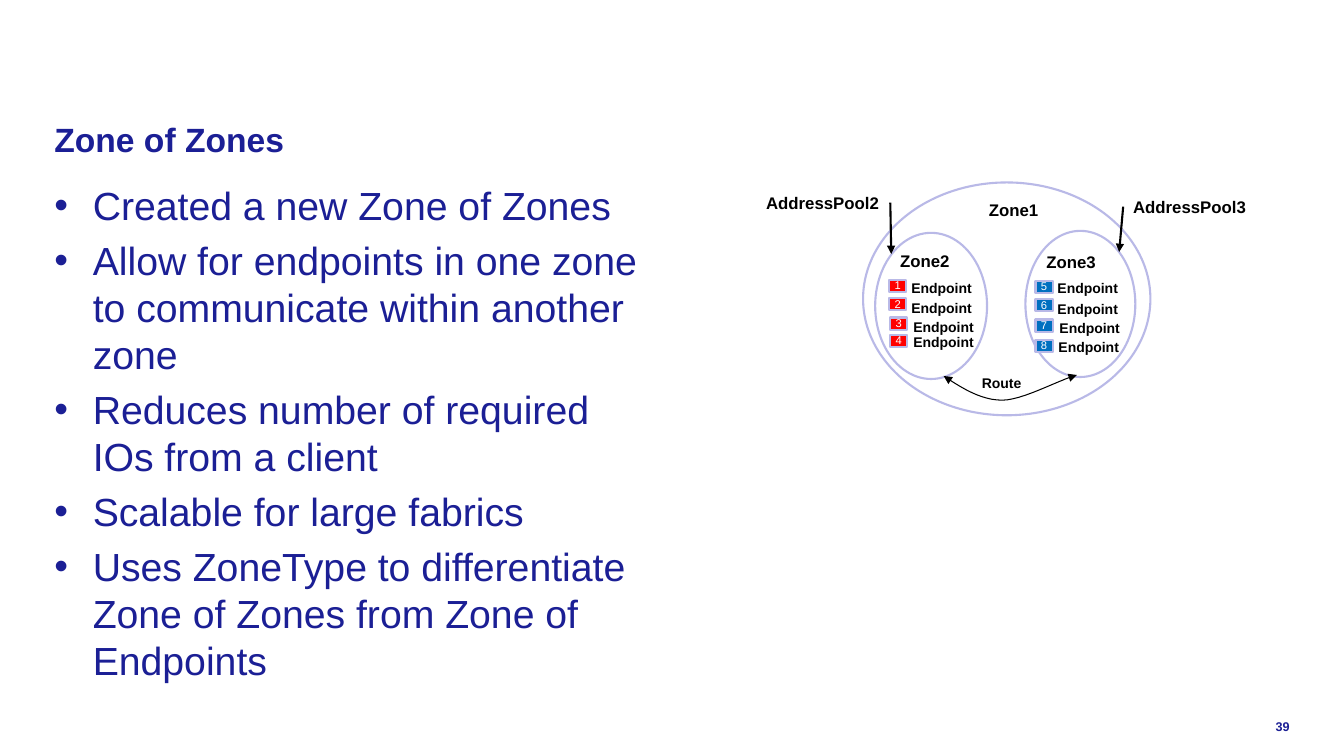
"""Builds the Zone of Zones slide with its bullet list and zone diagram."""
import pptx
import pptx.dml.color
import pptx.enum.shapes
import pptx.enum.text
import pptx.oxml
import pptx.oxml.ns
import pptx.util

Inches = pptx.util.Inches
Pt = pptx.util.Pt
MSO_SHAPE = pptx.enum.shapes.MSO_SHAPE
ANCHOR = pptx.enum.text.MSO_ANCHOR
ALIGN = pptx.enum.text.PP_ALIGN
AUTO = pptx.enum.text.MSO_AUTO_SIZE


def rgb(value):
    return pptx.dml.color.RGBColor.from_string(value)


def add_xml(parent, tag, **attrs):
    el = pptx.oxml.parse_xml(f"<a:{tag} {pptx.oxml.ns.nsdecls('a')}/>")
    for name, value in attrs.items():
        el.set(name, value)
    parent.append(el)


def bezier(start, c1, c2, end, steps=12):
    for i in range(1, steps + 1):
        t = i / steps
        weights = ((1 - t) ** 3, 3 * t * (1 - t) ** 2, 3 * t * t * (1 - t), t ** 3)
        yield tuple(
            sum(w * pt[axis] for w, pt in zip(weights, (start, c1, c2, end)))
            for axis in (0, 1)
        )


class Deck:
    FONT = "Arial"
    NAVY = "1B1F95"
    LILAC = "B9B9E7"
    BLACK = "000000"
    WHITE = "FFFFFF"

    def __init__(self):
        self.prs = pptx.Presentation()
        self.prs.slide_width = Inches(13.33)
        self.prs.slide_height = Inches(7.5)
        self.s = self.prs.slides.add_slide(self.prs.slide_layouts[1])

    def style(self, p, size, color, bold=False, align=ALIGN.LEFT):
        p.alignment = align
        p.font.name = self.FONT
        p.font.size = Pt(size)
        p.font.bold = bold
        p.font.color.rgb = rgb(color)

    def place(self, sp, x, y, w, h):
        sp.left, sp.top, sp.width, sp.height = map(Inches, (x, y, w, h))

    def title(self, text, *box):
        sp = self.s.shapes.title
        self.place(sp, *box)
        tf = sp.text_frame
        tf.text = text
        tf.auto_size = AUTO.NONE
        tf.vertical_anchor = ANCHOR.MIDDLE
        self.style(tf.paragraphs[0], 24, self.NAVY, bold=True)

    def bullets(self, items, *box):
        sp = self.s.placeholders[1]
        self.place(sp, *box)
        tf = sp.text_frame
        tf.text = "\n".join(items)
        tf.auto_size = AUTO.NONE
        for i, p in enumerate(tf.paragraphs):
            p.space_before = Pt(5.6 if i else 0)
            pPr = p._p.get_or_add_pPr()
            pPr.set("marL", str(Inches(0.38)))
            pPr.set("indent", str(Inches(-0.38)))
            add_xml(pPr, "buFont", typeface=self.FONT)
            add_xml(pPr, "buChar", char="•")
            self.style(p, 28, self.NAVY)

    def text(self, text, x, y, w, h, size):
        tf = self.s.shapes.add_textbox(*map(Inches, (x, y, w, h))).text_frame
        tf.text = text
        tf.word_wrap = False
        tf.auto_size = AUTO.SHAPE_TO_FIT_TEXT
        self.style(tf.paragraphs[0], size, self.BLACK, bold=True)

    def page_number(self, number, *box):
        tf = self.s.shapes.add_textbox(*map(Inches, box)).text_frame
        tf.text = str(number)
        tf.word_wrap = True
        self.style(tf.paragraphs[0], 9, self.NAVY, bold=True, align=ALIGN.RIGHT)

    def shape(self, kind, *box):
        sp = self.s.shapes.add_shape(kind, *map(Inches, box))
        sp.shadow.inherit = False
        sp.fill.background()
        sp.line.color.rgb = rgb(self.LILAC)
        sp.line.width = Pt(1.5)
        return sp

    def ellipse(self, *box):
        self.shape(MSO_SHAPE.OVAL, *box)

    def chip(self, number, x, y, color):
        sp = self.shape(MSO_SHAPE.RECTANGLE, x, y, 0.17, 0.12)
        sp.fill.solid()
        sp.fill.fore_color.rgb = rgb(color)
        tf = sp.text_frame
        tf.text = str(number)
        tf.word_wrap = False
        tf.vertical_anchor = ANCHOR.MIDDLE
        tf.margin_left = tf.margin_right = tf.margin_top = tf.margin_bottom = 0
        p = tf.paragraphs[0]
        p.line_spacing = 0.9
        self.style(p, 8, self.WHITE, align=ALIGN.CENTER)

    def arrow(self, start, end):
        straight = pptx.enum.shapes.MSO_CONNECTOR.STRAIGHT
        cn = self.s.shapes.add_connector(straight, *map(Inches, start + end))
        cn.line.color.rgb = rgb(self.BLACK)
        cn.line.width = Pt(1.5)
        add_xml(cn.line._get_or_add_ln(), "tailEnd", type="triangle")
        add_xml(cn._element.spPr, "effectLst")

    def curve(self, start, *segments):
        points = [start]
        for segment in segments:
            points += bezier(points[-1], *segment)
        points = [(Inches(x), Inches(y)) for x, y in points]
        fb = self.s.shapes.build_freeform(*points[0])
        fb.add_line_segments(points[1:], close=False)
        sp = fb.convert_to_shape()
        sp.shadow.inherit = False
        sp.fill.background()
        sp.line.color.rgb = rgb(self.BLACK)
        sp.line.width = Pt(0.75)
        for end in ("headEnd", "tailEnd"):
            add_xml(sp.line._get_or_add_ln(), end, type="triangle")


def main():
    deck = Deck()
    deck.title("Zone of Zones", 0.44, 1, 12.44, 0.75)
    deck.bullets([
        "Created a new Zone of Zones",
        "Allow for endpoints in one zone to communicate within another zone",
        "Reduces number of required IOs from a client",
        "Scalable for large fabrics",
        "Uses ZoneType to differentiate Zone of Zones from Zone of Endpoints",
    ], 0.44, 1.75, 6.11, 5)
    deck.page_number(39, 10.22, 7.08, 2.67, 0.25)

    deck.ellipse(8.56, 1.81, 2.85, 2.31)
    deck.ellipse(8.68, 2.31, 1.11, 1.45)
    deck.ellipse(10.17, 2.29, 1.09, 1.45)
    for name, x, y in (("Zone1", 9.71, 1.93), ("Zone2", 8.83, 2.44), ("Zone3", 10.28, 2.45)):
        deck.text(name, x, y, 0.7, 0.3, 12)
    for name, x, y in (("AddressPool2", 7.5, 1.86), ("AddressPool3", 11.14, 1.9)):
        deck.text(name, x, y, 1.33, 0.3, 12)

    endpoints = {
        "FF0000": [(1, 8.82, 2.78, 8.94, 2.72), (2, 8.82, 2.96, 8.94, 2.92),
                   (3, 8.83, 3.15, 8.96, 3.11), (4, 8.83, 3.32, 8.96, 3.26)],
        "0070C0": [(5, 10.27, 2.79, 10.39, 2.72), (6, 10.27, 2.97, 10.39, 2.93),
                   (7, 10.27, 3.17, 10.41, 3.12), (8, 10.27, 3.37, 10.4, 3.31)],
    }
    for color, rows in endpoints.items():
        for number, chip_x, chip_y, label_x, label_y in rows:
            deck.chip(number, chip_x, chip_y, color)
            deck.text("Endpoint", label_x, label_y, 0.84, 0.28, 10)

    deck.text("Route", 9.64, 3.67, 0.6, 0.27, 10)
    deck.arrow((8.83, 2.01), (8.84, 2.52))
    deck.arrow((11.14, 2.05), (11.1, 2.5))
    deck.curve(
        (9.36, 3.73),
        ((9.54, 3.85), (9.73, 3.97), (9.94, 3.97)),
        ((10.14, 3.97), (10.48, 3.78), (10.68, 3.72)),
    )
    deck.prs.save("out.pptx")


if __name__ == "__main__":
    main()
